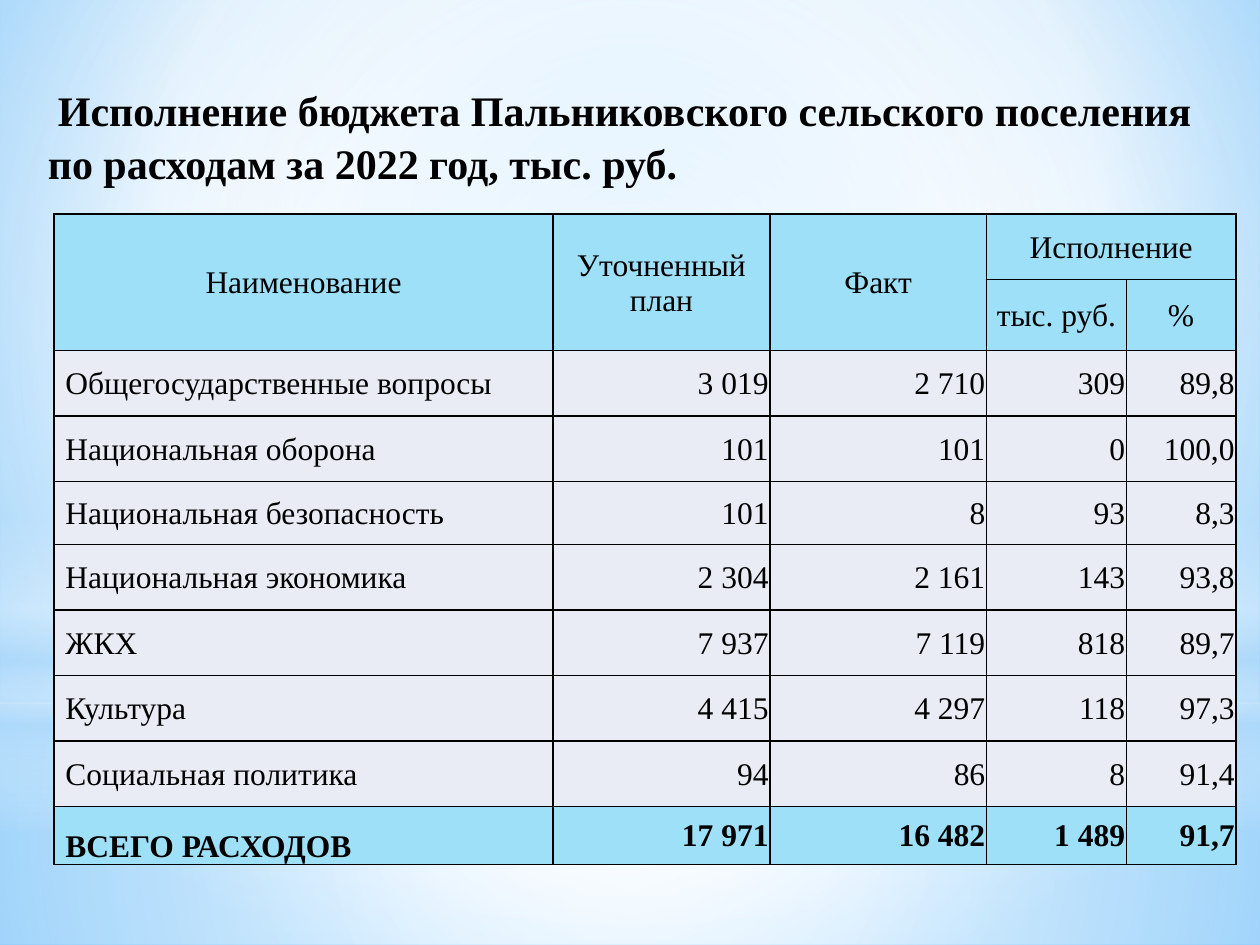
import pptx
import pptx.util
import pptx.dml.color
import pptx.enum.shapes
import pptx.enum.text
import pptx.oxml
import pptx.oxml.ns
from dataclasses import dataclass

Inches = pptx.util.Inches
Pt = pptx.util.Pt
RGB = pptx.dml.color.RGBColor.from_string
Align = pptx.enum.text.PP_ALIGN
Anchor = pptx.enum.text.MSO_ANCHOR
Kind = pptx.enum.shapes.MSO_SHAPE
qn = pptx.oxml.ns.qn
NS = pptx.oxml.ns.nsdecls("a")


@dataclass
class Theme:
    font: str = "Times New Roman"
    ink: str = "000000"
    head: str = "9EE0F8"
    body: str = "E9EBF5"
    white: str = "FFFFFF"
    pale: str = "B4DCFA"
    sky: str = "9ED5FF"
    deep: str = "5BB9FF"
    title: int = 24
    text: int = 18
    line: int = 1


theme = Theme()


def shade(holder, stops, focus=None):
    marks = "".join(
        f'<a:gs pos="{pos * 1000}"><a:srgbClr val="{color}">'
        f'<a:alpha val="{alpha * 1000}"/></a:srgbClr></a:gs>'
        for pos, color, alpha in stops)
    if focus:
        sides = " ".join(f'{side}="{value * 1000}"' for side, value in zip("ltrb", focus))
        course = f'<a:path path="circle"><a:fillToRect {sides}/></a:path>'
    else:
        course = '<a:lin ang="5400000" scaled="0"/>'
    fill = pptx.oxml.parse_xml(
        f'<a:gradFill {NS} rotWithShape="1"><a:gsLst>{marks}</a:gsLst>{course}</a:gradFill>')
    holder.replace(holder.find(qn("a:solidFill")), fill)


def style(para, size, bold):
    for run in para.runs:
        run.font.name = theme.font
        run.font.size = Pt(size)
        run.font.bold = bold
        run.font.color.rgb = RGB(theme.ink)


deck = pptx.Presentation()
deck.slide_width = Inches(10)
deck.slide_height = Inches(7.5)
slide = deck.slides.add_slide(deck.slide_layouts[5])

slide.background.fill.solid()
shade(slide.element.find(".//" + qn("p:bgPr")),
      [(0, theme.sky, 100), (60, theme.white, 100), (100, theme.deep, 100)],
      (20, 10, 20, 60))

mid = (50, 50, 50, 50)
glows = [
    (Kind.RECTANGLE, 5.58, 1.92, mid,
     [(0, theme.white, 91), (37, theme.white, 76), (100, theme.pale, 79)]),
    (Kind.RECTANGLE, 0, 5.58, mid,
     [(0, theme.white, 89), (48, theme.white, 62), (100, theme.pale, 79)]),
    (Kind.RECTANGLE, 4.12, 2.5, None,
     [(0, theme.white, 0), (29, theme.white, 30), (45, theme.pale, 40),
      (55, theme.white, 26), (65, theme.pale, 60), (100, theme.white, 0)]),
    (Kind.OVAL, 1.75, 5.58, mid,
     [(0, theme.white, 100), (56, theme.white, 0)]),
]
for kind, top, height, focus, stops in glows:
    glow = slide.shapes.add_shape(kind, 0, Inches(top), Inches(10), Inches(height))
    glow.shadow.inherit = False
    glow.line.fill.background()
    glow.fill.solid()
    shade(glow.element.spPr, stops, focus)

title = slide.shapes.title
title.left, title.top = Inches(0.28), Inches(0.6)
title.width, title.height = Inches(9.45), Inches(0.71)
slide.shapes.element.append(title.element)
frame = title.text_frame
frame.text = ("Исполнение бюджета Пальниковского сельского поселения\v"
              "по расходам за 2022 год, тыс. руб.")
frame.vertical_anchor = Anchor.TOP
frame.word_wrap = True
frame.auto_size = pptx.enum.text.MSO_AUTO_SIZE.NONE
para = frame.paragraphs[0]
para.alignment = Align.LEFT
para.line_spacing = 1.05
para._p.get_or_add_pPr().set("indent", str(Inches(0.08)))
style(para, theme.title, True)

rows = [
    ("Наименование", "Уточненный план", "Факт", "Исполнение", ""),
    ("", "", "", "тыс. руб.", "%"),
    ("Общегосударственные вопросы", "3 019", "2 710", "309", "89,8"),
    ("Национальная оборона", "101", "101", "0", "100,0"),
    ("Национальная безопасность", "101", "8", "93", "8,3"),
    ("Национальная экономика", "2 304", "2 161", "143", "93,8"),
    ("ЖКХ", "7 937", "7 119", "818", "89,7"),
    ("Культура", "4 415", "4 297", "118", "97,3"),
    ("Социальная политика", "94", "86", "8", "91,4"),
    ("ВСЕГО РАСХОДОВ", "17 971", "16 482", "1 489", "91,7"),
]
widths = [3.96, 1.72, 1.72, 1.11, 0.87]
heights = [0.52, 0.56, 0.52, 0.52, 0.5, 0.52, 0.52, 0.52, 0.52, 0.46]
last = len(rows) - 1

table = slide.shapes.add_table(
    len(rows), len(widths), Inches(0.43), Inches(1.7),
    Inches(sum(widths)), Inches(sum(heights))).table
table.first_row = False
table.horz_banding = False
for col, width in zip(table.columns, widths):
    col.width = Inches(width)
for row, height in zip(table.rows, heights):
    row.height = Inches(height)

for r, row in enumerate(rows):
    for c, text in enumerate(row):
        cell = table.cell(r, c)
        cell.text = text
        cell.margin_left = cell.margin_right = cell.margin_top = Inches(0.01)
        cell.margin_bottom = 0
        cell.vertical_anchor = Anchor.BOTTOM if (r, c) == (last, 0) else Anchor.MIDDLE
        cell.fill.solid()
        cell.fill.fore_color.rgb = RGB(theme.head if r < 2 or r == last else theme.body)
        para = cell.text_frame.paragraphs[0]
        if r < 2:
            para.alignment = Align.CENTER
        elif c:
            para.alignment = Align.RIGHT
        else:
            para.alignment = Align.LEFT
            para._p.get_or_add_pPr().set("marL", str(Inches(0.08)))
        style(para, theme.text, r == last)
        for spot, side in enumerate("LRTB"):
            edge = pptx.oxml.parse_xml(
                f'<a:ln{side} {NS} w="{Pt(theme.line)}"><a:solidFill>'
                f'<a:srgbClr val="{theme.ink}"/></a:solidFill></a:ln{side}>')
            cell._tc.tcPr.insert(spot, edge)

for c in range(3):
    table.cell(0, c).merge(table.cell(1, c))
table.cell(0, 3).merge(table.cell(0, 4))

deck.save("out.pptx")
